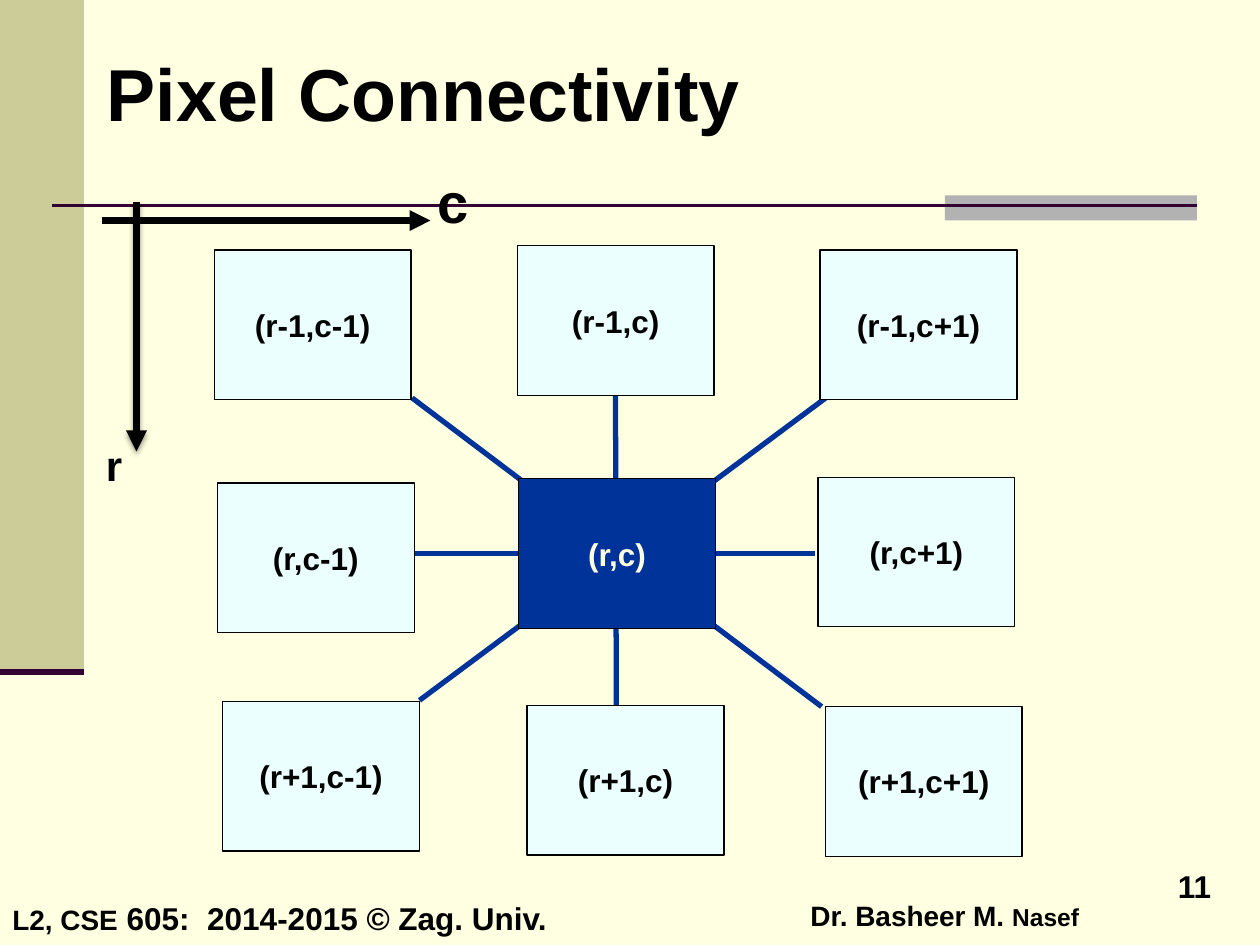
from lxml import etree
from pptx import Presentation
from pptx.dml.color import RGBColor
from pptx.enum.shapes import MSO_CONNECTOR as LINK, MSO_SHAPE as SHAPE
from pptx.enum.text import MSO_ANCHOR as ANCHOR, MSO_AUTO_SIZE as FIT, PP_ALIGN as ALIGN
from pptx.oxml.ns import qn
from pptx.util import Inches, Pt

# The slide is a grid of 120 columns by 90 rows of equal size.
COLS, ROWS = 120, 90
UNIT = Inches(10) / COLS

CREAM = RGBColor(0xFF, 0xFF, 0xE1)
SAND = RGBColor(0xCC, 0xCC, 0x99)
GREY = RGBColor(0xB2, 0xB2, 0xB2)
PLUM = RGBColor(0x33, 0x00, 0x33)
BLUE = RGBColor(0x00, 0x33, 0x99)
ICE = RGBColor(0xEB, 0xFF, 0xFF)
BLACK = RGBColor(0, 0, 0)


def grid(*cells):
    return [round(n * UNIT) for n in cells]


def style(para, size, color=BLACK):
    font = para.font
    font.name, font.size, font.bold = "Arial", Pt(size), True
    font.color.rgb = color


def add_rect(slide, box, fill, edge=None):
    rect = slide.shapes.add_shape(SHAPE.RECTANGLE, *grid(*box))
    rect.shadow.inherit = False
    rect.fill.solid()
    rect.fill.fore_color.rgb = fill
    if edge is None:
        rect.line.fill.background()
    else:
        rect.line.color.rgb = edge
        rect.line.width = Pt(0.75)
    return rect


def add_line(slide, start, end, color, width, arrow=False, shade=False):
    line = slide.shapes.add_connector(LINK.STRAIGHT, *grid(*start, *end))
    line.line.color.rgb = color
    line.line.width = Pt(width)
    if arrow:
        etree.SubElement(line.line._get_or_add_ln(), qn("a:tailEnd"), type="triangle")
    props = line._element.spPr
    effect = etree.SubElement(props, qn("a:effectLst"))
    if shade:
        drop = etree.SubElement(effect, qn("a:outerShdw"), blurRad=str(Pt(3.1)),
                                dist=str(Pt(1.6)), dir="5400000", rotWithShape="0")
        tint = etree.SubElement(drop, qn("a:srgbClr"), val=str(BLACK))
        etree.SubElement(tint, qn("a:alpha"), val="38000")
    return line


def add_text(slide, box, runs, wrap=True, fit=FIT.SHAPE_TO_FIT_TEXT, anchor=ANCHOR.TOP):
    """Add one line made of (text, size) runs."""
    frame = slide.shapes.add_textbox(*grid(*box)).text_frame
    frame.word_wrap, frame.auto_size, frame.vertical_anchor = wrap, fit, anchor
    para = frame.paragraphs[0]
    style(para, runs[0][1])
    for text, size in runs:
        run = para.add_run()
        run.text = text
        if size != runs[0][1]:
            run.font.size = Pt(size)


def add_frame(slide, box):
    """Draw the side band and the rule under the title."""
    x, y, w, h = box
    band, foot, rule = 8, y + 64, y + 19.6
    add_rect(slide, (x, y, band, foot - y), SAND)
    add_rect(slide, (x + w - 30, y + 18.6, 24, 2.4), GREY)
    add_line(slide, (x + 5, rule), (x + w - 6, rule), PLUM, 1.5)
    add_line(slide, (x, foot), (x + band, foot), PLUM, 3.5)


def add_footer(slide, box):
    x, y, w, h = box
    add_text(slide, (x, y + 3, 56, 4.8),
             [("L2, CSE", 16), (" 605:  2014-2015 © Zag. Univ.", 18)])
    add_text(slide, (x + 76, y + 3, 33, 4.4), [("Dr. Basheer M. ", 16), ("Nasef", 14)])
    add_text(slide, (x + w - 9, y, 7, 6), [("11", 18)], fit=FIT.NONE)


def add_pixels(slide, box):
    """Draw the 3 by 3 pixels and the lines that join the middle one to the rest."""
    x, y, w, h = box
    wide, high = 18.75, 14.25
    step, drop = (w - wide) / 2, (h - high) / 2
    ends = [((18.85, 14.5), (57.85, 43.9)), ((19.55, 43.3), (59.05, 13.9)),
            ((18.95, 29.3), (57.25, 29.3)), ((38.2, 14.25), (38.3, 44))]
    links = [add_line(slide, (x + a, y + b), (x + c, y + d), BLUE, 3)
             for (a, b), (c, d) in ends]
    # Small shifts of each pixel from its place in the even grid
    shifts = [[(0, 0.4), (0, 0), (0, 0.4)],
              [(0.3, 0.7), (0.15, 0.3), (-0.2, 0.15)],
              [(0.8, -0.4), (0.95, 0), (0.5, 0.1)]]
    signs = ("-1", "", "+1")
    cells = {}
    for i, row in enumerate(shifts):
        for j, (dx, dy) in enumerate(row):
            mid = i == j == 1
            spot = (x + j * step + dx, y + i * drop + dy, wide, high)
            cell = add_rect(slide, spot, BLUE if mid else ICE, BLACK)
            frame = cell.text_frame
            frame.word_wrap, frame.vertical_anchor = False, ANCHOR.MIDDLE
            para = frame.paragraphs[0]
            para.text = f"(r{signs[i]},c{signs[j]})"
            para.alignment = ALIGN.CENTER
            style(para, 18, CREAM if mid else BLACK)
            cells[i, j] = cell
    links[3].begin_connect(cells[0, 1], 2)


def add_axes(slide, box):
    x, y, w, h = box
    add_line(slide, (x + 0.7, y + 6), (x + w, y + 6), BLACK, 4, arrow=True)
    add_line(slide, (x + 4, y + 4.2), (x + 4, y + h), BLACK, 4, arrow=True, shade=True)
    add_text(slide, (x + w - 0.5, y + 0.4, 5.4, 7.7), [("c", 32)], wrap=False)
    add_text(slide, (x - 0.1, y + h - 1.7, 4, 6), [("r", 24)], wrap=False)


def main():
    deck = Presentation()
    deck.slide_width, deck.slide_height = grid(COLS, ROWS)
    slide = deck.slides.add_slide(deck.slide_layouts[6])
    back = slide.background.fill
    back.solid()
    back.fore_color.rgb = CREAM
    add_frame(slide, (0, 0, COLS, ROWS))
    add_footer(slide, (0, 82, COLS, 8))
    add_text(slide, (9, 5, 102, 7.5), [("Pixel Connectivity", 42)],
             fit=FIT.NONE, anchor=ANCHOR.MIDDLE)
    add_pixels(slide, (20.4, 23.4, 76.45, 58.05))
    add_axes(slide, (9, 15, 32, 28))
    deck.save("out.pptx")


if __name__ == "__main__":
    main()
